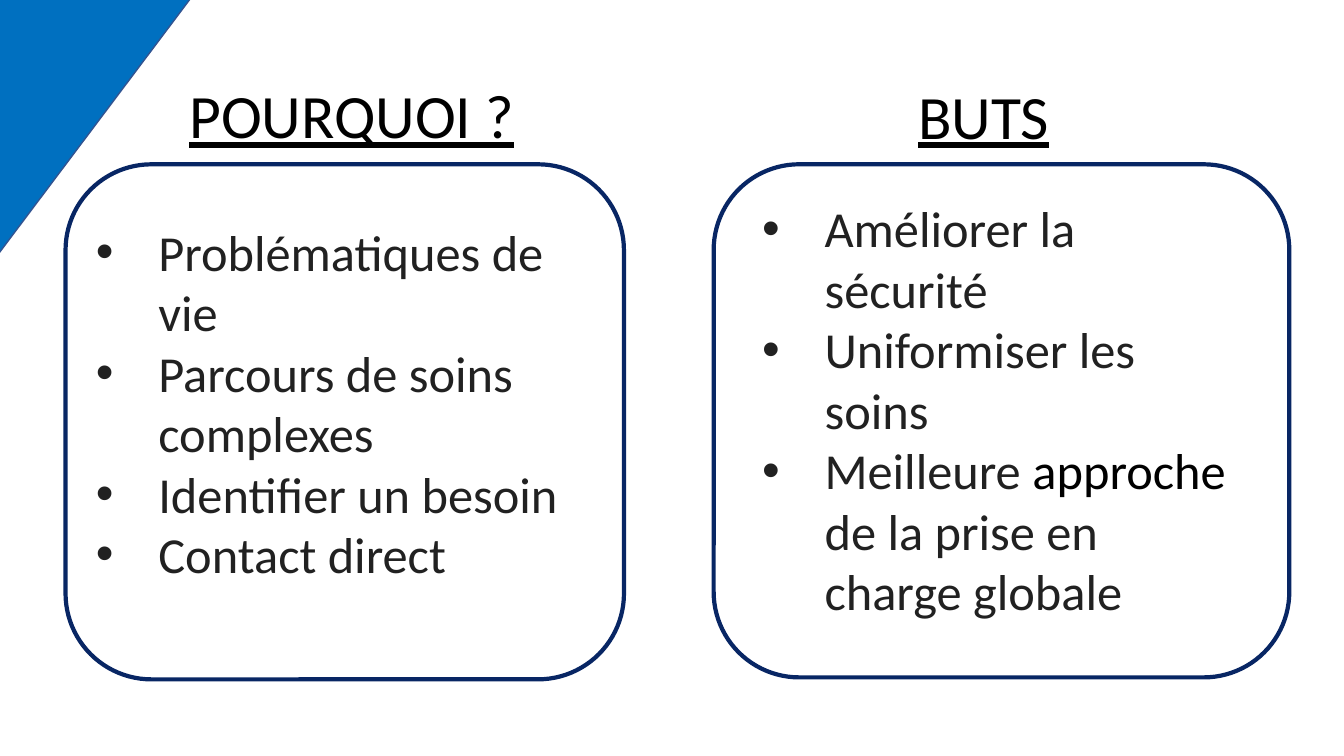
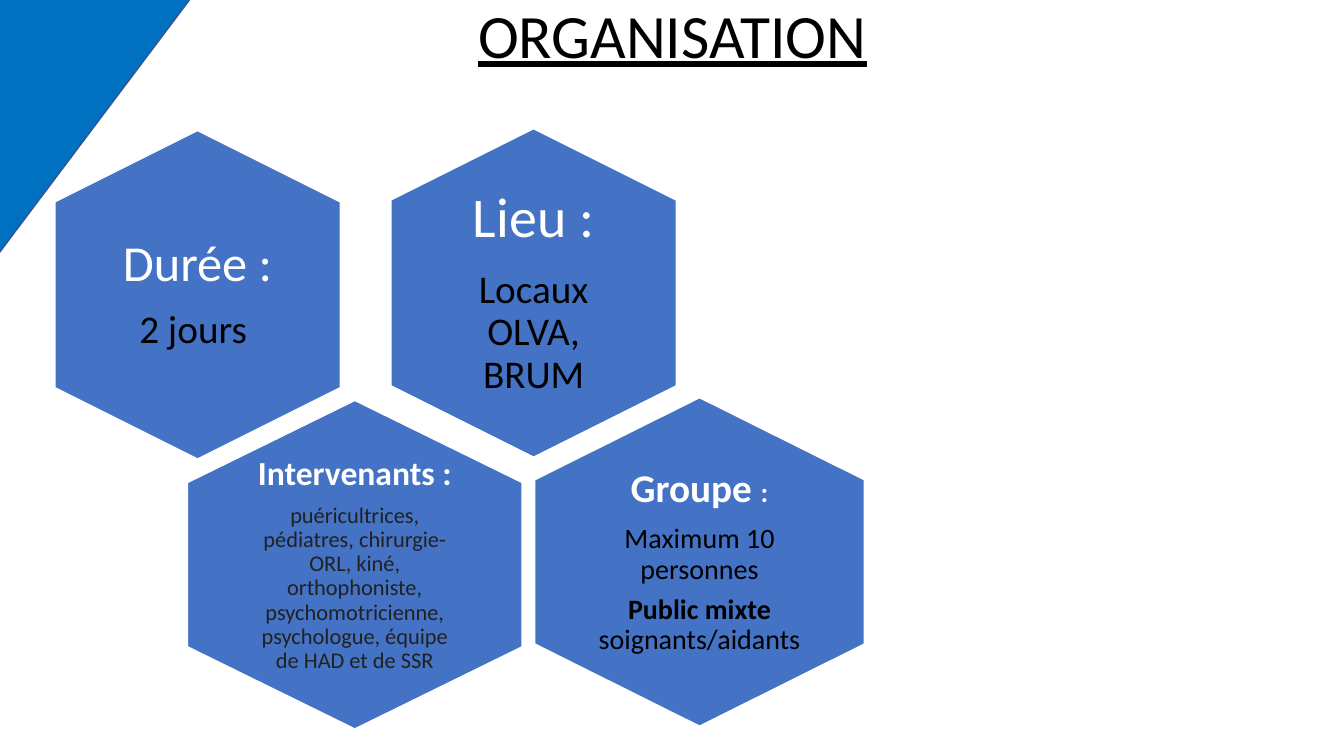
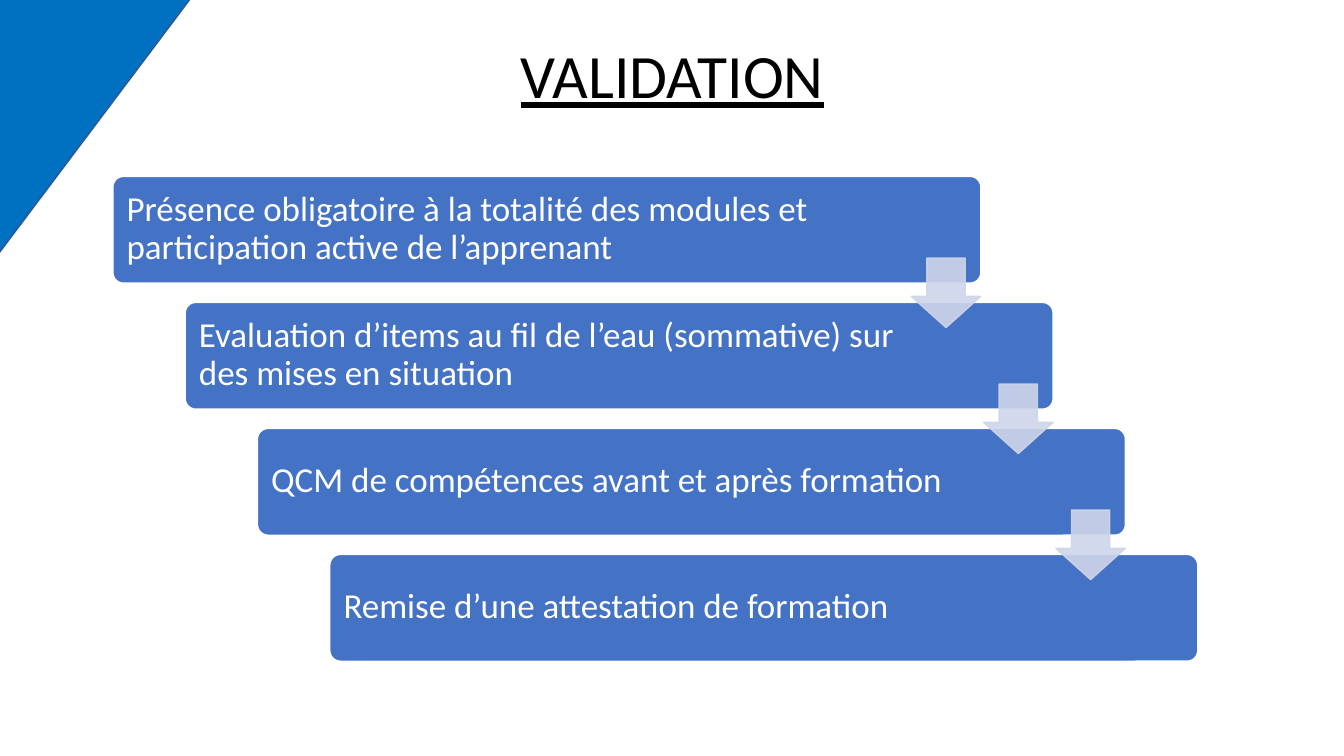
from dataclasses import dataclass

from lxml.etree import SubElement
from pptx import Presentation
from pptx.dml.color import RGBColor
from pptx.enum.shapes import MSO_SHAPE as Kind
from pptx.enum.text import MSO_ANCHOR as Anchor, MSO_AUTO_SIZE as Fit, PP_ALIGN as Align
from pptx.oxml.ns import qn
from pptx.util import Inches, Pt

WIDE, HIGH = Inches(13.33), Inches(7.5)
FONT = "Calibri"
BLACK = RGBColor(0x00, 0x00, 0x00)
WHITE = RGBColor(0xFF, 0xFF, 0xFF)
INK = RGBColor(0x21, 0x21, 0x21)
BLUE = RGBColor(0x44, 0x72, 0xC4)
NAVY = RGBColor(0x00, 0x20, 0x60)
SKY = RGBColor(0x00, 0x70, 0xC0)
EDGE = RGBColor(0x32, 0x54, 0x91)
PALE = RGBColor(0xCF, 0xD5, 0xEA)
HEAD = 44
GAP = 0.35
TIGHT = 0.9


@dataclass(frozen=True)
class Box:
    """Position and size in percent of the slide."""
    x: float
    y: float
    w: float
    h: float

    def lay(self, shape) -> None:
        shape.left, shape.top, shape.width, shape.height = self.emu()

    def emu(self) -> tuple[int, int, int, int]:
        return (int(WIDE * self.x / 100), int(HIGH * self.y / 100),
                int(WIDE * self.w / 100), int(HIGH * self.h / 100))


@dataclass(frozen=True)
class Run:
    text: str
    size: float
    color: RGBColor = BLACK
    bold: bool = False
    under: bool = False


Para = list[Run]


@dataclass(frozen=True)
class Panel:
    frame: Box
    list_box: Box
    items: list[Para]


@dataclass(frozen=True)
class Cell:
    x: float
    y: float
    span: float
    w: float
    h: float
    inset: float
    paras: list[Para]


def mid(x: float, y: float, w: float, h: float) -> Box:
    return Box(x - w / 2, y - h / 2, w, h)


def draw(slide, kind: Kind, box: Box, fill: RGBColor, edge: RGBColor, width: float = 1):
    shape = slide.shapes.add_shape(kind, *box.emu())
    shape.shadow.inherit = False
    shape.fill.solid()
    shape.fill.fore_color.rgb = fill
    shape.line.color.rgb = edge
    shape.line.width = Pt(width)
    return shape


def fade(shape, *shares: int) -> None:
    for color, share in zip(list(shape.element.iter(qn("a:srgbClr"))), shares):
        SubElement(color, qn("a:alpha")).set("val", str(share * 1000))


def pad(frame, left: float, top: float, right: float, base: float) -> None:
    frame.margin_left, frame.margin_top = Pt(left), Pt(top)
    frame.margin_right, frame.margin_bottom = Pt(right), Pt(base)


def write(shape, paras: list[Para], align: Align, anchor: Anchor = Anchor.TOP,
          pitch: float = 1.0, gap: float = 0) -> None:
    frame = shape.text_frame
    frame.word_wrap = True
    frame.auto_size = Fit.NONE
    frame.vertical_anchor = anchor
    for i, para in enumerate(paras):
        line = frame.add_paragraph() if i else frame.paragraphs[0]
        line.alignment = align
        line.line_spacing = pitch
        line.space_before = Pt(0)
        line.space_after = Pt(para[0].size * gap)
        for part in para:
            run = line.add_run()
            run.text = part.text
            font = run.font
            font.name, font.size = FONT, Pt(part.size)
            font.bold, font.underline = part.bold, part.under
            font.color.rgb = part.color


def start(deck, layout: int, title: str, box: Box):
    slide = deck.slides.add_slide(deck.slide_layouts[layout])
    corner = draw(slide, Kind.ISOSCELES_TRIANGLE, Box(-9.75, -16.93, 27.68, 45.2), SKY, EDGE)
    corner.rotation = 65.5
    head = slide.shapes.title
    box.lay(head)
    pad(head.text_frame, 7.2, 3.6, 7.2, 3.6)
    write(head, [[Run(title, HEAD, under=True)]], Align.CENTER, pitch=TIGHT)
    return slide


def show(slide, panel: Panel, body) -> None:
    frame = draw(slide, Kind.ROUNDED_RECTANGLE, panel.frame, WHITE, NAVY, 3)
    fade(frame, 81, 97)
    panel.list_box.lay(body)
    write(body, panel.items, Align.LEFT)
    for line in body.text_frame.paragraphs:
        props = line._p.get_or_add_pPr()
        props.set("marL", str(Inches(0.62)))
        props.set("indent", str(-Inches(0.62)))
    body.element.getparent().append(body.element)


def goals(deck) -> None:
    slide = start(deck, 3, "POURQUOI ?", Box(5.4, 10.67, 41.55, 13.6))
    why = ["Problématiques de vie", "Parcours de soins complexes",
           "Identifier un besoin", "Contact direct"]
    aims = ["Améliorer la sécurité", "Uniformiser les soins"]
    last = [Run("Meilleure ", 36, INK), Run("approche ", 36),
            Run("de la prise en charge globale", 36, INK)]
    panels = [
        Panel(Box(4.88, 21.73, 41.55, 68.13), Box(6.38, 28.53, 38.78, 52.93),
              [[Run(text, 36, INK)] for text in why]),
        Panel(Box(53.1, 21.73, 42.83, 67.87), Box(55.95, 25.47, 37.2, 61.47),
              [[Run(text, 36, INK)] for text in aims] + [last]),
    ]
    bodies = [p for p in slide.placeholders if p.placeholder_format.idx in (1, 2)]
    for panel, body in zip(panels, bodies):
        show(slide, panel, body)
    head = slide.shapes.add_textbox(*Box(54.6, 9.6, 37.2, 11.2).emu())
    write(head, [[Run("BUTS", HEAD, under=True)]], Align.CENTER)


def comb(slide, cell: Cell) -> None:
    hexa = draw(slide, Kind.HEXAGON, mid(cell.x, cell.y, 24.45, cell.span), BLUE, WHITE)
    hexa.adjustments[0] = 0.25
    hexa.rotation = 90
    label = slide.shapes.add_textbox(*mid(cell.x, cell.y, cell.w, cell.h).emu())
    pad(label.text_frame, *[cell.inset] * 4)
    write(label, cell.paras, Align.CENTER, Anchor.MIDDLE, TIGHT, GAP)


def plan(deck) -> None:
    slide = start(deck, 5, "ORGANISATION", Box(6.9, 0, 86.25, 19.33))
    staff = ("puéricultrices, pédiatres, chirurgie-ORL, kiné, orthophoniste, "
             "psychomotricienne, psychologue, équipe de HAD et de SSR")
    cells = [
        Cell(39.7, 38.75, 37.73, 14.63, 29.87, 12.2,
             [[Run("Lieu :", 40, WHITE)], [Run("Locaux OLVA, BRUM", 28)]]),
        Cell(14.7, 39, 37.73, 14.63, 29.87, 0,
             [[Run("Durée :", 36, WHITE)], [Run("2 jours ", 28)]]),
        Cell(26.4, 74.7, 44.27, 16.65, 28.93, 7.2,
             [[Run("Intervenants :", 24, WHITE, True)], [Run(staff, 16, INK)]]),
        Cell(52.05, 74.33, 43.6, 16.35, 28.93, 0,
             [[Run("Groupe ", 28, WHITE, True), Run(":", 20, WHITE, True)],
              [Run("Maximum 10 personnes", 20)],
              [Run("Public mixte ", 20, bold=True), Run("soignants/aidants", 20)]]),
    ]
    for cell in cells:
        comb(slide, cell)


def steps(deck) -> None:
    slide = start(deck, 5, "VALIDATION", Box(6.9, 5.33, 86.25, 19.33))
    texts = [
        "Présence obligatoire à la totalité des modules et participation active de l’apprenant",
        "Evaluation d’items au fil de l’eau (sommative) sur des mises en situation",
        "QCM de compétences avant et après formation",
        "Remise d’une attestation de formation",
    ]
    spots = [(8.4 + 5.38 * i, 23.33 + 16.67 * i) for i in range(len(texts))]
    for (x, y), text in zip(spots, texts):
        bar = draw(slide, Kind.ROUNDED_RECTANGLE, Box(x, y, 64.58, 14.13), BLUE, WHITE)
        bar.adjustments[0] = 0.1
        pad(bar.text_frame, 7.6, 8, 110, 9)
        write(bar, [[Run(text, 25, WHITE)]], Align.LEFT, Anchor.MIDDLE, TIGHT, GAP)
    for x, y in spots[:-1]:
        arrow = draw(slide, Kind.DOWN_ARROW, Box(x + 59.4, y + 10.8, 5.18, 9.2), PALE, PALE)
        arrow.adjustments[0] = 0.55
        arrow.adjustments[1] = 0.45
        fade(arrow, 90, 90)


def main() -> None:
    deck = Presentation()
    deck.slide_width, deck.slide_height = WIDE, HIGH
    for build in (goals, plan, steps):
        build(deck)
    for slide in deck.slides:
        for holder in list(slide.placeholders):
            if not holder.text_frame.text:
                holder.element.getparent().remove(holder.element)
    deck.save("out.pptx")


if __name__ == "__main__":
    main()
